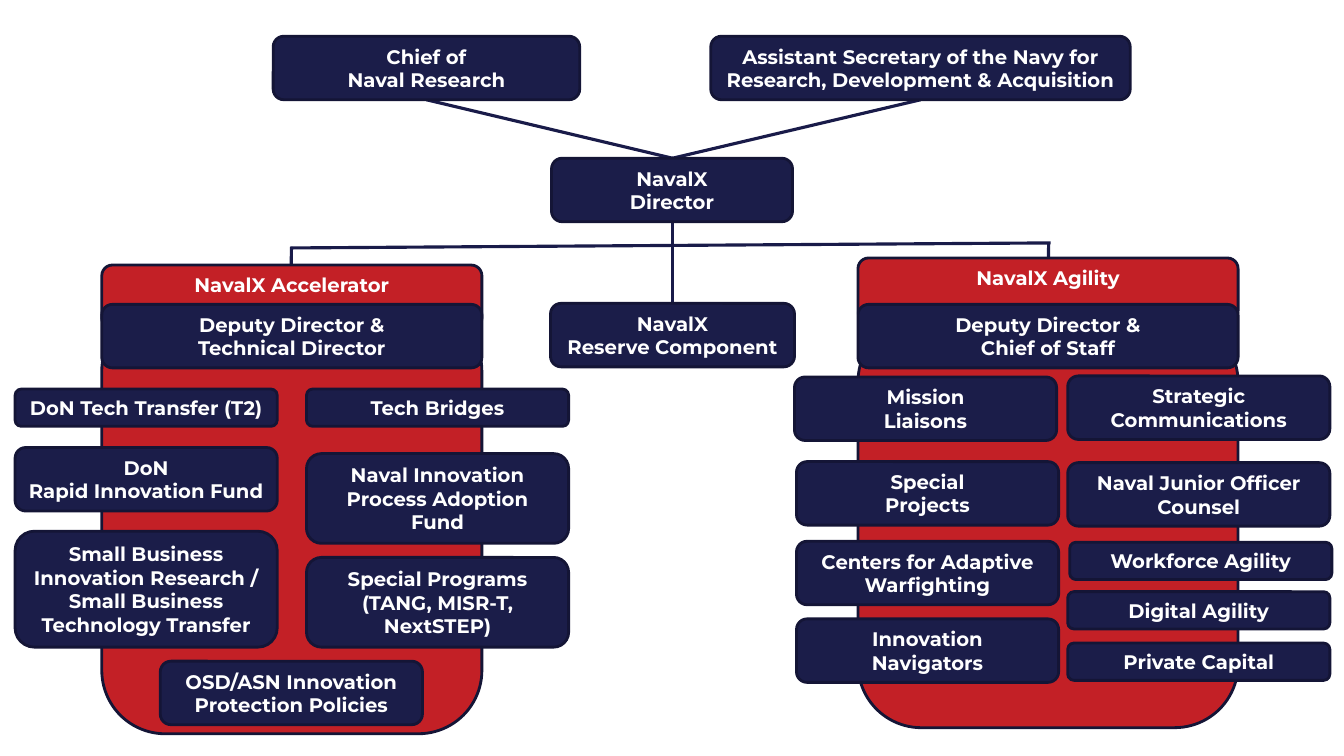
from dataclasses import dataclass

from lxml import etree
from pptx import Presentation
from pptx.dml.color import RGBColor
from pptx.enum import shapes, text
from pptx.oxml import ns
from pptx.util import Inches, Pt


@dataclass(frozen=True)
class Theme:
    navy: RGBColor = RGBColor.from_string("1B1D49")
    connector: RGBColor = RGBColor.from_string("191B49")
    outline: RGBColor = RGBColor.from_string("141536")
    red: RGBColor = RGBColor.from_string("C32026")
    white: RGBColor = RGBColor.from_string("FFFFFF")
    font: str = "Montserrat"
    text_size: Pt = Pt(14)
    outline_width: Pt = Pt(2)
    connector_width: Pt = Pt(2.25)


class OrgChart:
    def __init__(self, slide, theme):
        self.slide = slide
        self.theme = theme

    def link(self, x1, y1, x2, y2):
        line = self.slide.shapes.add_connector(
            shapes.MSO_CONNECTOR.STRAIGHT,
            Inches(x1), Inches(y1), Inches(x2), Inches(y2))
        line.line.color.rgb = self.theme.connector
        line.line.width = self.theme.connector_width
        etree.SubElement(line._element.spPr, ns.qn("a:effectLst"))

    def panel(self, kind, left, top, width, height, fill):
        panel = self.slide.shapes.add_shape(
            kind, Inches(left), Inches(top), Inches(width), Inches(height))
        panel.shadow.inherit = False
        panel.fill.solid()
        panel.fill.fore_color.rgb = fill
        panel.line.color.rgb = self.theme.outline
        panel.line.width = self.theme.outline_width
        return panel

    def body(self, left, top, width, height):
        self.panel(shapes.MSO_SHAPE.ROUNDED_RECTANGLE,
                   left, top, width, height, self.theme.red)

    def unit(self, left, top, width, lines, label, fill=None,
             anchor=text.MSO_ANCHOR.MIDDLE):
        """Add a labelled box whose height follows from its number of lines."""
        box = self.panel(shapes.MSO_SHAPE.FLOWCHART_ALTERNATE_PROCESS,
                         left, top, width, 0.11 + 0.26 * lines,
                         fill or self.theme.navy)
        frame = box.text_frame
        frame.word_wrap = True
        frame.auto_size = text.MSO_AUTO_SIZE.SHAPE_TO_FIT_TEXT
        frame.vertical_anchor = anchor
        frame.text = label
        for paragraph in frame.paragraphs:
            paragraph.alignment = text.PP_ALIGN.CENTER
            paragraph.font.name = self.theme.font
            paragraph.font.size = self.theme.text_size
            paragraph.font.bold = True
            paragraph.font.color.rgb = self.theme.white

    def heading(self, left, top, width, label):
        self.unit(left, top, width, 2, label, self.theme.red,
                  text.MSO_ANCHOR.TOP)


DIRECTOR_X = 6.67
DIRECTOR_TOP = 1.57
DEPUTY_TOP = 3.02
DIVISION_WIDTH = 3.77
TEAM_WIDTH = 2.6

# left, top, width, lines, label
LEADERS = [
    (2.71, 0.36, 3.04, 2, "Chief of\nNaval Research"),
    (7.05, 0.36, 4.16, 2, "Assistant Secretary of the Navy for "
                          "Research, Development & Acquisition"),
    (5.47, DIRECTOR_TOP, 2.39, 2, "NavalX\nDirector"),
    (5.46, 3.01, 2.42, 2, "NavalX\nReserve Component"),
]

# left, heading top, heading, body top, body bottom, deputy
DIVISIONS = [
    (1.01, 2.63, "NavalX Accelerator", 3.05, 7.28,
     "Deputy Director &\nTechnical Director"),
    (8.51, 2.56, "NavalX Agility", 3.16, 7.22,
     "Deputy Director &\nChief of Staff"),
]

# left, top, lines, label
TEAMS = [
    (0.15, 3.86, 1, "DoN Tech Transfer (T2)"),
    (0.15, 4.44, 2, "DoN\nRapid Innovation Fund"),
    (0.15, 5.27, 4, "Small Business Innovation Research / "
                    "Small Business Technology Transfer"),
    (3.04, 3.86, 1, "Tech Bridges"),
    (3.04, 4.5, 3, "Naval Innovation\nProcess Adoption Fund"),
    (3.04, 5.53, 3, "Special Programs (TANG, MISR-T, NextSTEP)"),
    (1.59, 6.56, 2, "OSD/ASN Innovation Protection Policies"),
    (7.88, 3.74, 2, "Mission\nLiaisons"),
    (7.9, 4.58, 2, "Special\nProjects"),
    (7.9, 5.37, 2, "Centers for Adaptive Warfighting"),
    (7.9, 6.14, 2, "Innovation\nNavigators"),
    (10.59, 3.73, 2, "Strategic\nCommunications"),
    (10.59, 4.59, 2, "Naval Junior Officer Counsel"),
    (10.61, 5.38, 1, "Workforce Agility"),
    (10.59, 5.87, 1, "Digital Agility"),
    (10.59, 6.38, 1, "Private Capital"),
]

LINKS = [
    (2.89, 2.45, 2.88, 4.5),
    (10.4, 2.42, 10.39, 4.47),
    (2.88, 2.46, 10.42, 2.41),
    (DIRECTOR_X, DIRECTOR_TOP, DIRECTOR_X, 3.01),
    (4.23, 0.99, DIRECTOR_X, DIRECTOR_TOP),
    (9.13, 0.99, DIRECTOR_X, DIRECTOR_TOP),
]


def main():
    deck = Presentation()
    deck.slide_width = Inches(13.33)
    deck.slide_height = Inches(7.5)
    chart = OrgChart(deck.slides.add_slide(deck.slide_layouts[6]), Theme())

    for link in LINKS:
        chart.link(*link)
    for left, heading_top, heading, body_top, bottom, deputy in DIVISIONS:
        chart.heading(left, heading_top, DIVISION_WIDTH, heading)
        chart.body(left, body_top, DIVISION_WIDTH, bottom - body_top)
        chart.unit(left, DEPUTY_TOP, DIVISION_WIDTH, 2, deputy)
    for leader in LEADERS:
        chart.unit(*leader)
    for left, top, lines, label in TEAMS:
        chart.unit(left, top, TEAM_WIDTH, lines, label)

    deck.save("out.pptx")


if __name__ == "__main__":
    main()
